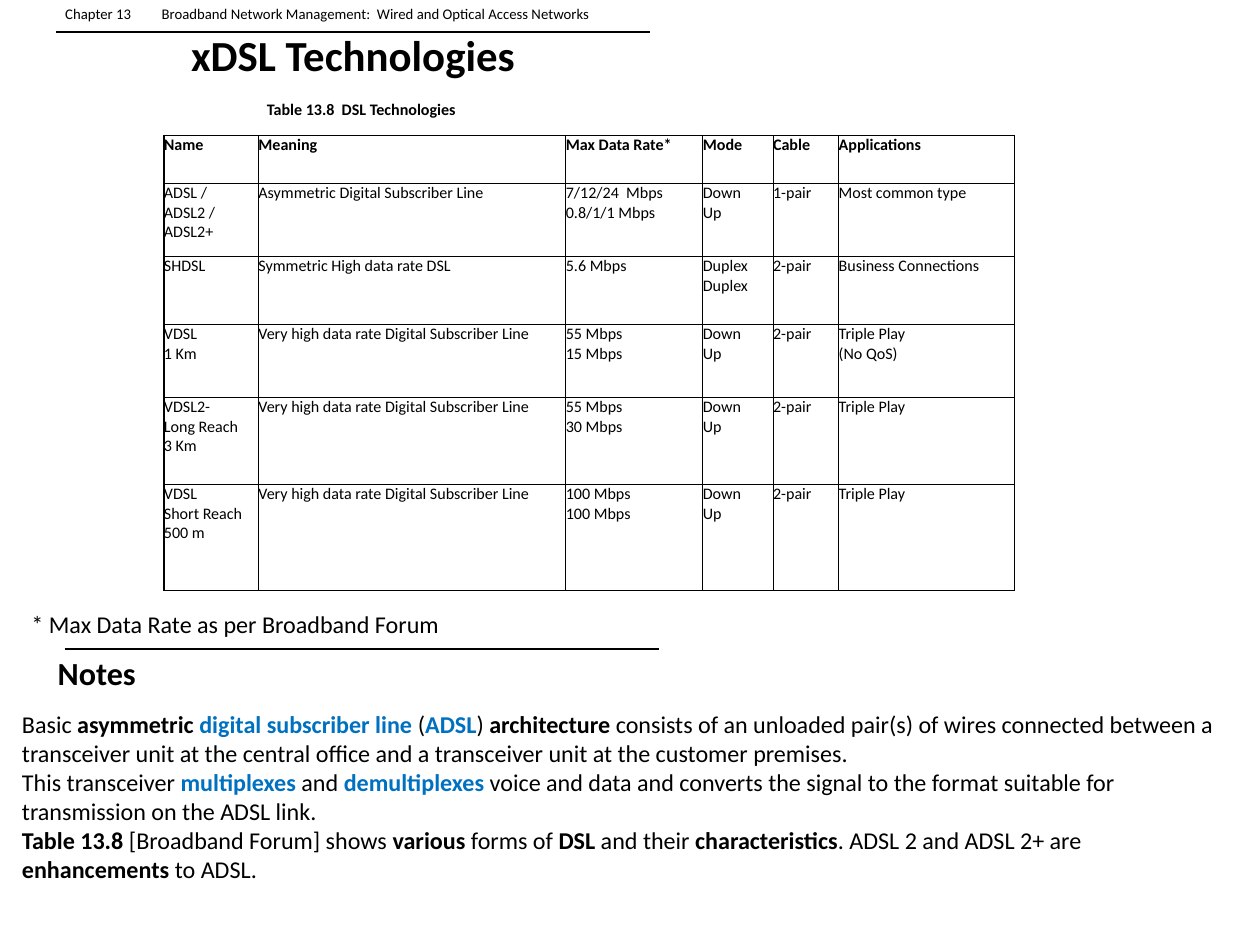
import lxml.etree
import pptx
import pptx.dml.color
import pptx.enum.shapes
import pptx.enum.text
import pptx.oxml.ns
import pptx.util

Cm = pptx.util.Cm
Pt = pptx.util.Pt
qn = pptx.oxml.ns.qn
ALIGN = pptx.enum.text.PP_ALIGN
BLACK = "000000"
BLUE = "0070C0"


def format_run(run, size, bold=False, color=BLACK):
    run.font.name = "Calibri"
    run.font.size = Pt(size)
    run.font.bold = bold
    run.font.color.rgb = pptx.dml.color.RGBColor.from_string(color)


def add_text_box(left, top, width, height, text=""):
    box = slide.shapes.add_textbox(Cm(left), Cm(top), Cm(width), Cm(height))
    box.text_frame.word_wrap = True
    box.text_frame.text = text
    return box.text_frame


presentation = pptx.Presentation()
presentation.slide_width = Cm(33.2)
presentation.slide_height = Cm(24.89)
slide = presentation.slides.add_slide(presentation.slide_layouts[6])

labels = [
    ("Chapter 13\tBroadband Network Management:  Wired and Optical Access Networks",
     1.47, 0, 15.82, 0.74, 11, False, ALIGN.LEFT),
    ("xDSL Technologies", 1.47, 0.81, 15.67, 1.27, 32, True, ALIGN.CENTER),
    ("Table 13.8  DSL Technologies", 0, 2.49, 19.05, 0.76, 12, True, ALIGN.CENTER),
    ("* Max Data Rate as per Broadband Forum", 0.58, 15.93, 12.57, 1.02, 18, False, ALIGN.LEFT),
    ("Notes", 1.27, 17.09, 4.24, 1.27, 24, True, ALIGN.LEFT),
]
for text, left, top, width, height, size, bold, alignment in labels:
    frame = add_text_box(left, top, width, height, text)
    if alignment == ALIGN.CENTER:
        frame.vertical_anchor = pptx.enum.text.MSO_ANCHOR.MIDDLE
    paragraph = frame.paragraphs[0]
    paragraph.alignment = alignment
    for run in paragraph.runs:
        format_run(run, size, bold)

for left, top in [(1.47, 0.84), (1.7, 17.09)]:
    rule = slide.shapes.add_connector(
        pptx.enum.shapes.MSO_CONNECTOR.STRAIGHT, Cm(left), Cm(top), Cm(left + 15.67), Cm(top))
    rule.line.color.rgb = pptx.dml.color.RGBColor.from_string(BLACK)
    rule.line.width = Pt(1)
    lxml.etree.SubElement(rule.element.spPr, qn("a:effectLst"))

very_high_rate = "Very high data rate Digital Subscriber Line"
technologies = [
    ["Name", "Meaning", "Max Data Rate*", "Mode", "Cable", "Applications"],
    ["ADSL /\nADSL2 / ADSL2+", "Asymmetric Digital Subscriber Line",
     "7/12/24  Mbps\n0.8/1/1 Mbps", "Down\nUp", "1-pair", "Most common type"],
    ["SHDSL", "Symmetric High data rate DSL", "5.6 Mbps", "Duplex\nDuplex", "2-pair",
     "Business Connections"],
    ["VDSL\n1 Km", very_high_rate, "55 Mbps\n15 Mbps", "Down\nUp", "2-pair",
     "Triple Play\n(No QoS)"],
    ["VDSL2-\nLong Reach\n3 Km", very_high_rate, "55 Mbps\n30 Mbps", "Down\nUp", "2-pair",
     "Triple Play"],
    ["VDSL\nShort Reach\n500 m", very_high_rate, "100 Mbps\n100 Mbps", "Down\nUp", "2-pair",
     "Triple Play"],
]
column_widths = [2.49, 8.1, 3.61, 1.85, 1.73, 4.62]
row_heights = [1.27, 1.93, 1.78, 1.93, 2.29, 2.79]
table = slide.shapes.add_table(
    len(row_heights), len(column_widths), Cm(4.32), Cm(3.56),
    Cm(sum(column_widths)), Cm(sum(row_heights))).table
table.first_row = False
table.horz_banding = False
for column, width in zip(table.columns, column_widths):
    column.width = Cm(width)

for row_index, (row, height) in enumerate(zip(table.rows, row_heights)):
    row.height = Cm(height)
    for cell, text in zip(row.cells, technologies[row_index]):
        cell.text_frame.text = text
        cell.margin_left = cell.margin_right = cell.margin_top = cell.margin_bottom = 0
        for paragraph in cell.text_frame.paragraphs:
            for run in paragraph.runs:
                format_run(run, 12, row_index == 0)
        properties = cell._tc.get_or_add_tcPr()
        for side in ["a:lnL", "a:lnR", "a:lnT", "a:lnB"]:
            border = lxml.etree.SubElement(properties, qn(side), w=str(Pt(1)))
            fill = lxml.etree.SubElement(border, qn("a:solidFill"))
            lxml.etree.SubElement(fill, qn("a:srgbClr"), val=BLACK)
        cell.fill.background()

plain, strong, term = (False, BLACK), (True, BLACK), (True, BLUE)
notes = [
    [("Basic ", plain), ("asymmetric ", strong), ("digital subscriber line", term),
     (" (", plain), ("ADSL", term), (") ", plain), ("architecture", strong),
     (" consists of an unloaded pair(s) of wires connected between a transceiver unit at "
      "the central office and a transceiver unit at the customer premises.", plain)],
    [("This transceiver ", plain), ("multiplexes", term), (" and ", plain),
     ("demultiplexes", term),
     (" voice and data and converts the signal to the format suitable for transmission "
      "on the ADSL link.", plain)],
    [("Table 13.8 ", strong), ("[Broadband Forum] shows ", plain), ("various", strong),
     (" forms of ", plain), ("DSL", strong), (" and their ", plain),
     ("characteristics", strong), (". ADSL 2 and ADSL 2+ are ", plain),
     ("enhancements", strong), (" to ADSL.", plain)],
]
frame = add_text_box(0.33, 18.57, 32.16, 4.88)
for index, note in enumerate(notes):
    paragraph = frame.add_paragraph() if index else frame.paragraphs[0]
    for text, (bold, color) in note:
        run = paragraph.add_run()
        run.text = text
        format_run(run, 18, bold, color)

presentation.save("out.pptx")
